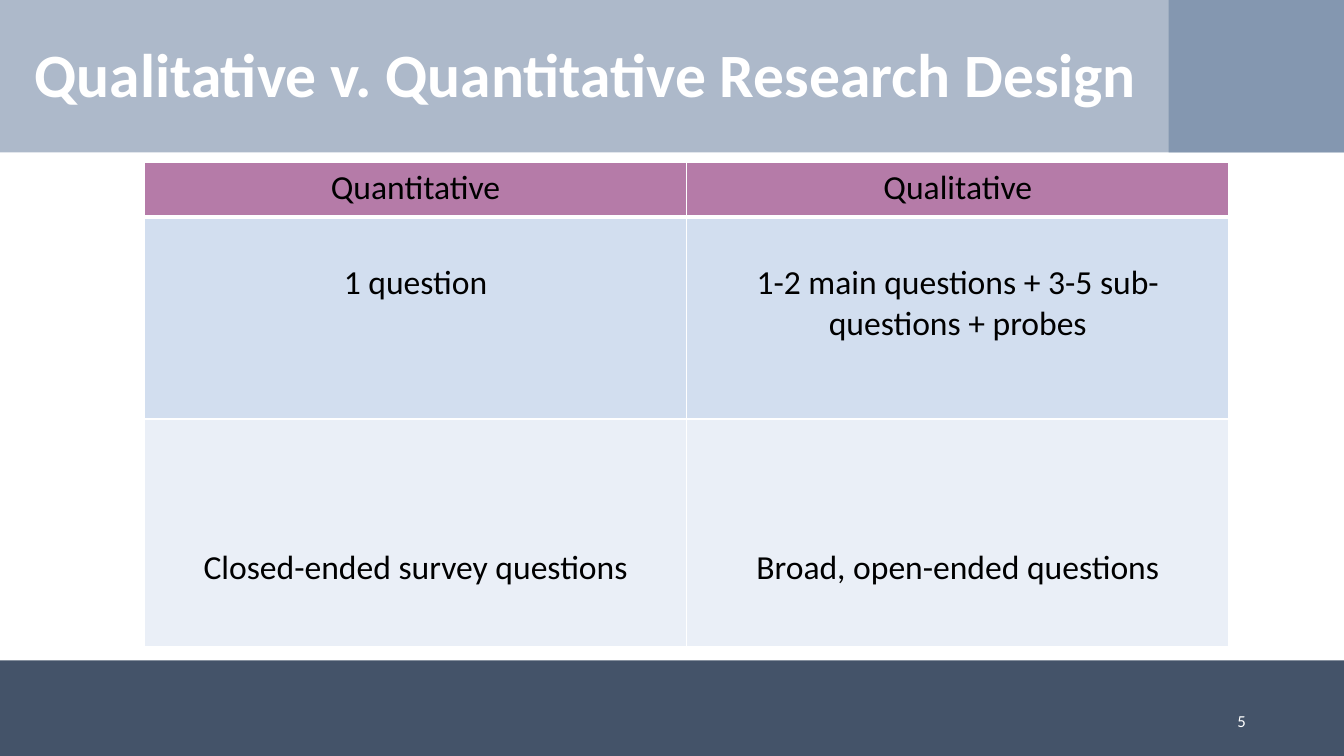
from dataclasses import dataclass

from lxml import etree
from pptx import Presentation
from pptx import util as u
from pptx.dml.color import RGBColor
from pptx.enum import shapes, text
from pptx.oxml import ns


@dataclass(frozen=True)
class Theme:
    font: str = "Calibri"
    white: str = "FFFFFF"
    black: str = "000000"
    header_band: str = "ADB9CA"
    corner: str = "8497B0"
    footer_band: str = "445369"
    table_header: str = "B57BA8"
    row_fills: tuple = ("D2DEEF", "EAEFF7")
    title_size: int = 44
    title_leading: int = 46
    body_size: int = 24
    number_size: int = 12


@dataclass(frozen=True)
class Box:
    left: float
    top: float
    width: float
    height: float

    def lengths(self):
        return [u.Cm(value) for value in (self.left, self.top, self.width, self.height)]


THEME = Theme()
PAGE = Box(0, 0, 33.87, 19.05)
HEADER = Box(0, 0, PAGE.width, 3.84)
FOOTER = Box(0, 16.64, PAGE.width, 2.41)
COMPARISON = Box(3.64, 4.09, 27.33, 12.21)
ROW_HEIGHTS = (1.37, 5.1, 5.74)
TOP_MARGINS = (0.13, 1.16, 3.23)
ROWS = (
    ("Quantitative", "Qualitative"),
    ("1 question", "1-2 main questions + 3-5 sub-questions + probes"),
    ("Closed-ended survey questions", "Broad, open-ended questions"),
)


def format_paragraph(paragraph, size, color, alignment, bold=False):
    paragraph.alignment = alignment
    for run in paragraph.runs:
        run.font.name = THEME.font
        run.font.size = u.Pt(size)
        run.font.bold = bold
        run.font.color.rgb = RGBColor.from_string(color)


def add_band(slide, box, color):
    shape = slide.shapes.add_shape(shapes.MSO_SHAPE.RECTANGLE, *box.lengths())
    shape.shadow.inherit = False
    shape.fill.solid()
    shape.fill.fore_color.rgb = RGBColor.from_string(color)
    shape.line.fill.background()


def add_header(slide, box, title_text):
    corner_width = 4.42
    add_band(slide, box, THEME.header_band)
    add_band(slide, Box(box.left + box.width - corner_width, box.top,
                        corner_width, box.height), THEME.corner)
    title = slide.shapes.title
    slide.shapes._spTree.append(title._element)
    title.left, title.top, title.width, title.height = Box(
        box.left, box.top + 0.94, 29.54, 2.03).lengths()
    title.text_frame.text = title_text
    title.text_frame.vertical_anchor = text.MSO_ANCHOR.MIDDLE
    title.text_frame.auto_size = text.MSO_AUTO_SIZE.NONE
    paragraph = title.text_frame.paragraphs[0]
    paragraph.line_spacing = u.Pt(THEME.title_leading)
    format_paragraph(paragraph, THEME.title_size, THEME.white,
                     text.PP_ALIGN.CENTER, bold=True)


def add_footer(slide, box, number):
    add_band(slide, box, THEME.footer_band)
    shape = slide.shapes.add_textbox(
        *Box(box.left + 29.01, box.top + 1.01, 2.64, 1.02).lengths())
    frame = shape.text_frame
    frame.word_wrap = True
    frame.vertical_anchor = text.MSO_ANCHOR.MIDDLE
    frame.text = number
    format_paragraph(frame.paragraphs[0], THEME.number_size, THEME.white,
                     text.PP_ALIGN.RIGHT)


def set_borders(cell, widths):
    properties = cell._tc.get_or_add_tcPr()
    for side, width in zip("LRTB", widths):
        line = etree.SubElement(properties, ns.qn(f"a:ln{side}"), w=str(u.Pt(width)))
        fill = etree.SubElement(line, ns.qn("a:solidFill"))
        etree.SubElement(fill, ns.qn("a:srgbClr"), val=THEME.white)


def add_comparison(slide, box):
    table = slide.shapes.add_table(len(ROWS), len(ROWS[0]), *box.lengths()).table
    for column in table.columns:
        column.width = u.Cm(box.width / len(ROWS[0]))
    fills = (THEME.table_header, *THEME.row_fills)
    for index, labels in enumerate(ROWS):
        table.rows[index].height = u.Cm(ROW_HEIGHTS[index])
        top_width = 3 if index == 1 else 1
        bottom_width = 3 if index == 0 else 1
        for column_index, label in enumerate(labels):
            cell = table.cell(index, column_index)
            set_borders(cell, (1, 1, top_width, bottom_width))
            cell.fill.solid()
            cell.fill.fore_color.rgb = RGBColor.from_string(fills[index])
            cell.margin_top = u.Cm(TOP_MARGINS[index])
            cell.text_frame.text = label
            format_paragraph(cell.text_frame.paragraphs[0], THEME.body_size,
                             THEME.black, text.PP_ALIGN.CENTER)


def main():
    presentation = Presentation()
    presentation.slide_width = u.Cm(PAGE.width)
    presentation.slide_height = u.Cm(PAGE.height)
    slide = presentation.slides.add_slide(presentation.slide_layouts[5])
    add_header(slide, HEADER, "Qualitative v. Quantitative Research Design")
    add_footer(slide, FOOTER, "5")
    add_comparison(slide, COMPARISON)
    presentation.save("out.pptx")


if __name__ == "__main__":
    main()
